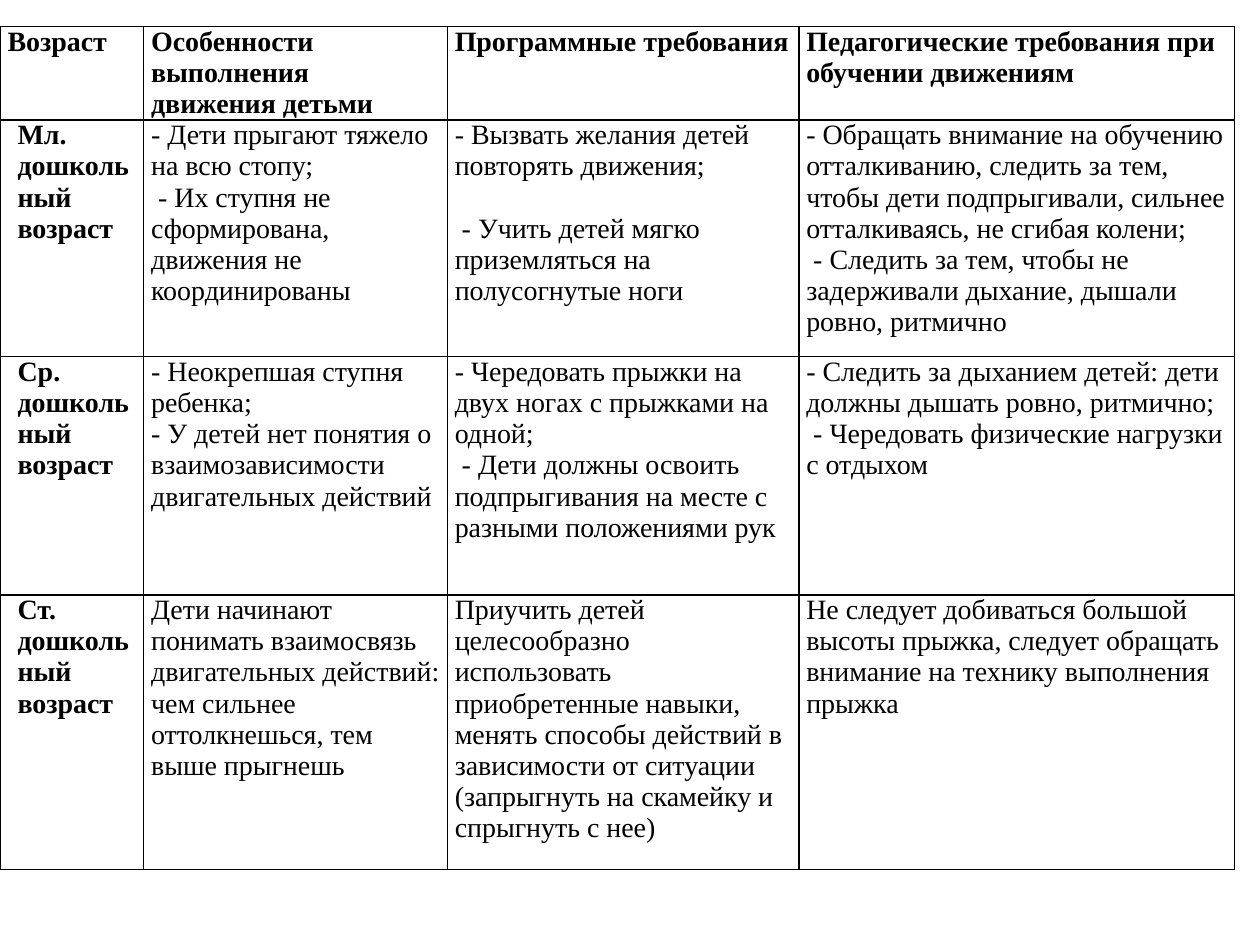
from dataclasses import dataclass

from lxml import etree
from pptx import Presentation
from pptx import util as u
from pptx.dml.color import RGBColor
from pptx.enum import text
from pptx.oxml import ns


@dataclass(frozen=True)
class Theme:
    font: str = "Times New Roman"
    size: int = 16
    ink: str = "000000"
    paper: str = "FFFFFF"
    rule: int = 1
    side_margin: float = 0.06
    age_indent: float = 0.08


THEME = Theme()
TABLE_LEFT, TABLE_TOP = 0, 0.21
COLUMNS = [1.14, 2.41, 2.79, 3.46]
ROWS = [0.74, 1.88, 1.89, 2.18]
PARAGRAPH_GAPS = {(1, 2): 18}  # points before later paragraphs, by (row, column)

# Each cell is a list of paragraphs
CONTENT = [
    [
        ["Возраст"],
        ["Особенности выполнения движения детьми"],
        ["Программные требования"],
        ["Педагогические требования при обучении движениям"],
    ],
    [
        ["Мл. дошкольный возраст"],
        ["- Дети прыгают тяжело на всю стопу;",
         " - Их ступня не сформирована, движения не координированы"],
        ["- Вызвать желания детей повторять движения;",
         " - Учить детей мягко приземляться на полусогнутые ноги"],
        ["- Обращать внимание на обучению отталкиванию, следить за тем, чтобы "
         "дети подпрыгивали, сильнее отталкиваясь, не сгибая колени;",
         " - Следить за тем, чтобы не задерживали дыхание, дышали ровно, ритмично"],
    ],
    [
        ["Ср. дошкольный возраст"],
        ["- Неокрепшая ступня ребенка;",
         "- У детей нет понятия о взаимозависимости двигательных действий"],
        ["- Чередовать прыжки на двух ногах с прыжками на одной;",
         " - Дети должны освоить подпрыгивания на месте с разными положениями рук"],
        ["- Следить за дыханием детей: дети должны дышать ровно, ритмично;",
         " - Чередовать физические нагрузки с отдыхом"],
    ],
    [
        ["Ст. дошкольный возраст"],
        ["Дети начинают понимать взаимосвязь  двигательных действий: чем "
         "сильнее оттолкнешься, тем выше прыгнешь"],
        ["Приучить детей целесообразно использовать приобретенные навыки, "
         "менять способы действий в зависимости от ситуации "
         "(запрыгнуть на скамейку и спрыгнуть с нее)"],
        ["Не следует добиваться большой высоты прыжка, следует обращать "
         "внимание на технику выполнения прыжка"],
    ],
]


def apply(target, values):
    for name, value in values.items():
        setattr(target, name, value)


def add_borders(cell):
    properties = cell._tc.get_or_add_tcPr()
    for side in ("lnL", "lnR", "lnT", "lnB"):
        line = etree.SubElement(properties, ns.qn(f"a:{side}"),
                                w=str(u.Pt(THEME.rule)))
        fill = etree.SubElement(line, ns.qn("a:solidFill"))
        etree.SubElement(fill, ns.qn("a:srgbClr"), val=THEME.ink)


def write_paragraph(paragraph, wording, bold):
    run = paragraph.add_run()
    run.text = wording
    apply(run.font, {"name": THEME.font, "size": u.Pt(THEME.size), "bold": bold})
    run.font.color.rgb = RGBColor.from_string(THEME.ink)


def fill_cell(cell, paragraphs, row, column):
    # Borders come before the fill in the cell properties
    add_borders(cell)
    cell.fill.solid()
    cell.fill.fore_color.rgb = RGBColor.from_string(THEME.paper)
    apply(cell, {
        "margin_left": u.Inches(THEME.side_margin),
        "margin_right": u.Inches(THEME.side_margin),
        "margin_top": 0,
        "margin_bottom": 0,
        "vertical_anchor": text.MSO_ANCHOR.TOP,
    })
    frame = cell.text_frame
    for index, wording in enumerate(paragraphs):
        paragraph = frame.add_paragraph() if index else frame.paragraphs[0]
        write_paragraph(paragraph, wording, bold=row == 0 or column == 0)
        if index and (row, column) in PARAGRAPH_GAPS:
            paragraph.space_before = u.Pt(PARAGRAPH_GAPS[row, column])
        # Age labels are indented below the header
        if row and column == 0:
            paragraph._p.get_or_add_pPr().set(
                "marL", str(u.Inches(THEME.age_indent)))


def add_requirements_table(slide):
    shape = slide.shapes.add_table(
        len(ROWS), len(COLUMNS), u.Inches(TABLE_LEFT), u.Inches(TABLE_TOP),
        u.Inches(sum(COLUMNS)), u.Inches(sum(ROWS)))
    table = shape.table
    apply(table, {"first_row": False, "horz_banding": False})
    for column, width in zip(table.columns, COLUMNS):
        column.width = u.Inches(width)
    for row, height in zip(table.rows, ROWS):
        row.height = u.Inches(height)
    for row, cells in enumerate(CONTENT):
        for column, paragraphs in enumerate(cells):
            fill_cell(table.cell(row, column), paragraphs, row, column)


def main():
    presentation = Presentation()
    apply(presentation, {"slide_width": u.Inches(10), "slide_height": u.Inches(7.5)})
    slide = presentation.slides.add_slide(presentation.slide_layouts[6])
    add_requirements_table(slide)
    presentation.save("out.pptx")


if __name__ == "__main__":
    main()
